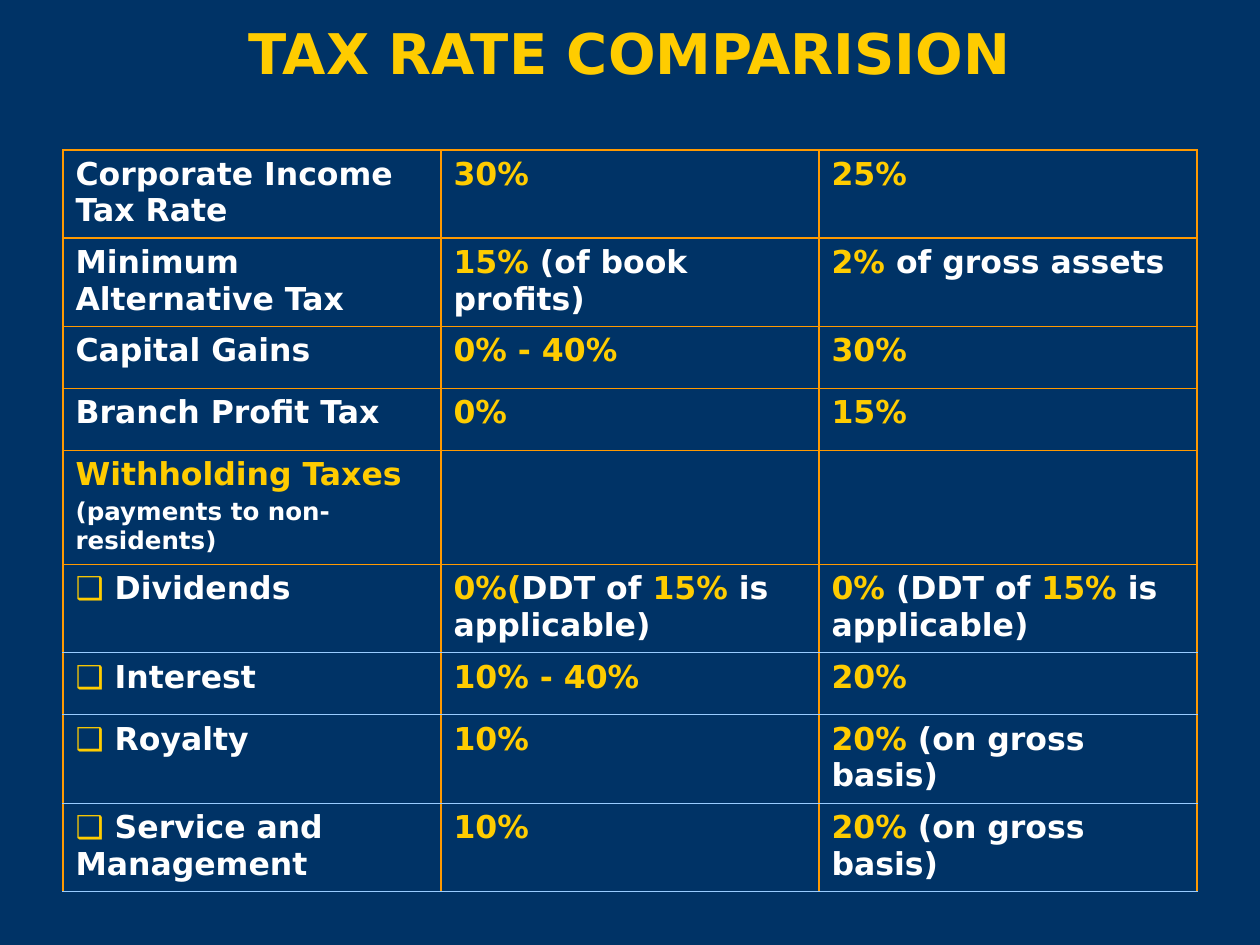
from lxml import etree
from pptx import Presentation
from pptx.dml.color import RGBColor
from pptx.enum.text import MSO_ANCHOR, PP_ALIGN
from pptx.oxml.ns import qn
from pptx.util import Cm, Pt

MIDDLE = MSO_ANCHOR.MIDDLE
CENTER = PP_ALIGN.CENTER
FONT = "DejaVu Sans"
COLORS = {
    "navy": "003366",
    "gold": "FFCC00",
    "white": "FFFFFF",
    "orange": "FF9900",
    "pale": "99CCFF",
}
BULLET = "❑"
FIRST_BULLET_ROW = 5
ROWS = [
    ["Corporate Income Tax Rate", "*30%*", "*25%*"],
    ["Minimum Alternative Tax", "*15%* (of book profits)", "*2%* of gross assets"],
    ["Capital Gains", "*0% - 40%*", "*30%*"],
    ["Branch Profit Tax", "*0%*", "*15%*"],
    ["*Withholding Taxes*\n(payments to non-residents)", "", ""],
    [" Dividends", "*0%(*DDT of *15%* is applicable)", "*0%* (DDT of *15%* is applicable)"],
    [" Interest", "*10% - 40%*", "*20%*"],
    [" Royalty", "*10%*", "*20%* (on gross basis)"],
    [" Service and Management", "*10%*", "*20%* (on gross basis)"],
]


def rgb(name):
    return RGBColor.from_string(COLORS[name])


def sub(parent, tag, **attrs):
    return etree.SubElement(parent, qn(tag), **attrs)


def set_font(p, size):
    p.font.name = FONT
    p.font.size = Pt(size)
    p.font.bold = True


def add_runs(p, text):
    for i, part in enumerate(text.split("*")):
        if part:
            r = p.add_run()
            r.text = part
            r.font.color.rgb = rgb("gold" if i % 2 else "white")


def format_paragraph(p, size, bulleted):
    pPr = p._p.get_or_add_pPr()
    sub(sub(pPr, "a:spcBef"), "a:spcPct", val="20000")
    if bulleted:
        pPr.set("marL", "0")
        pPr.set("indent", "0")
        sub(sub(pPr, "a:buClr"), "a:srgbClr", val=COLORS["gold"])
        sub(pPr, "a:buFont", typeface=FONT)
        sub(pPr, "a:buChar", char=BULLET)
    set_font(p, size)


def set_borders(cell, row):
    top = "pale" if row > FIRST_BULLET_ROW else "orange"
    bottom = "pale" if row >= FIRST_BULLET_ROW else "orange"
    sides = {"a:lnL": "orange", "a:lnR": "orange", "a:lnT": top, "a:lnB": bottom}
    tcPr = cell._tc.get_or_add_tcPr()
    for tag, color in sides.items():
        width = Pt(1) if color == "orange" else Pt(0.5)
        ln = sub(tcPr, tag, w=str(width))
        sub(sub(ln, "a:solidFill"), "a:srgbClr", val=COLORS[color])


def fill_cell(cell, text, row, col):
    set_borders(cell, row)
    cell.fill.solid()
    cell.fill.fore_color.rgb = rgb("navy")
    tf = cell.text_frame
    for i, line in enumerate(text.split("\n")):
        p = tf.add_paragraph() if i else tf.paragraphs[0]
        format_paragraph(p, 14 if i else 18, col == 0 and row >= FIRST_BULLET_ROW)
        add_runs(p, line)


def add_title(s, x, y, w, h):
    tf = s.shapes.add_textbox(x, y, w, h).text_frame
    tf.word_wrap = True
    tf.vertical_anchor = MIDDLE
    p = tf.paragraphs[0]
    p.alignment = CENTER
    set_font(p, 32)
    add_runs(p, "*TAX RATE COMPARISION*")


def add_tax_table(s, x, y, w, row_h):
    n = len(ROWS)
    table = s.shapes.add_table(n, len(ROWS[0]), x, y, w, row_h * n).table
    table.first_row = False
    table.horz_banding = False
    for row, texts in enumerate(ROWS):
        table.rows[row].height = row_h
        for col, text in enumerate(texts):
            fill_cell(table.cell(row, col), text, row, col)


def main():
    prs = Presentation()
    prs.slide_width, prs.slide_height = Cm(25.4), Cm(19.05)
    s = prs.slides.add_slide(prs.slide_layouts[6])
    s.background.fill.solid()
    s.background.fill.fore_color.rgb = rgb("navy")
    add_title(s, Cm(1.27), Cm(0), Cm(22.86), Cm(2.12))
    add_tax_table(s, Cm(1.27), Cm(3.02), Cm(22.86), Cm(1.25))
    prs.save("out.pptx")


if __name__ == "__main__":
    main()
